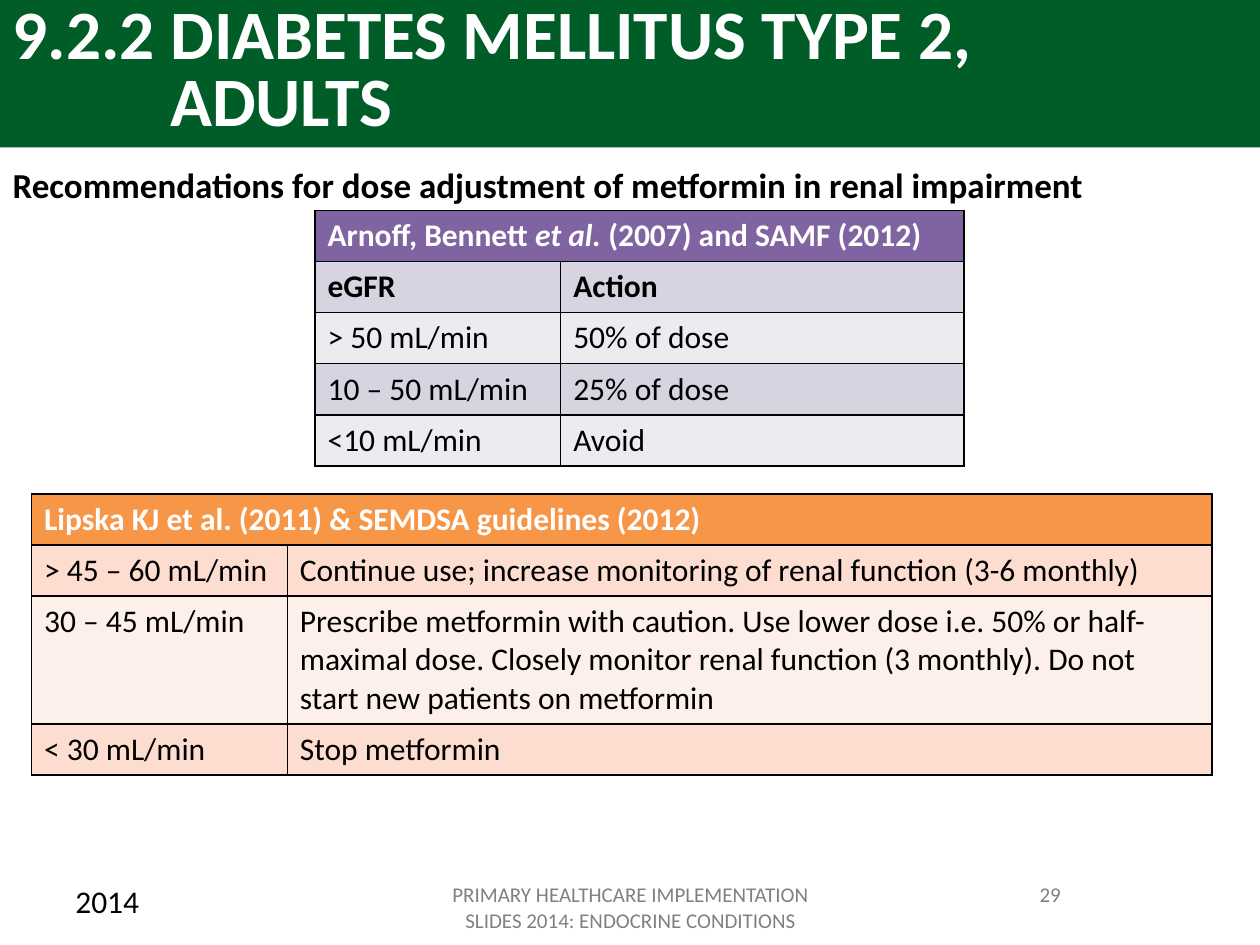
from lxml.etree import SubElement
from pptx import Presentation
from pptx.dml.color import RGBColor
from pptx.enum.shapes import MSO_SHAPE as Shape
from pptx.enum.text import MSO_ANCHOR as Anchor, MSO_AUTO_SIZE as AutoSize, PP_ALIGN as Align
from pptx.oxml.ns import qn
from pptx.util import Inches, Pt

COLORS = {
    "green": "005D28", "white": "FFFFFF", "black": "000000", "gray": "808080",
    "purple": "8064A2", "purple_mid": "D8D3E0", "purple_light": "EDEAF0",
    "orange": "F79646", "orange_mid": "FCDDCF", "orange_light": "FDEFE9",
}
FONT = "Calibri"

TITLE_LINES = ["9.2.2 DIABETES MELLITUS TYPE 2,", "ADULTS"]
SUBTITLE = "Recommendations for dose adjustment of metformin in renal impairment"
TABLES = [
    {
        "position": (2.5, 1.67), "columns": (1.95, 3.2), "palette": "purple", "bold_rows": 2,
        "heading": [("Arnoff, Bennett ", False), ("et al. ", True), ("(2007) and SAMF (2012)", False)],
        "rows": [
            ("eGFR", "Action"),
            ("> 50 mL/min", "50% of dose"),
            ("10 – 50 mL/min", "25% of dose"),
            ("<10 mL/min", "Avoid"),
        ],
    },
    {
        "position": (0.25, 3.92), "columns": (2.03, 7.34), "palette": "orange", "bold_rows": 1,
        "heading": [("Lipska KJ et al. (2011) & SEMDSA guidelines (2012)", False)],
        "rows": [
            ("> 45 – 60 mL/min", "Continue use; increase monitoring of renal function (3-6 monthly)"),
            ("30 – 45 mL/min", "Prescribe metformin with caution. Use lower dose i.e. 50% or half-maximal dose. "
             "Closely monitor renal function (3 monthly). Do not start new patients on metformin"),
            ("< 30 mL/min", "Stop metformin"),
        ],
    },
]
ROW_HEIGHT = 0.4
FOOTERS = [  # text, left, width, size, color, alignment
    ("2014", 0.5, 2.33, 18, "black", Align.LEFT),
    ("PRIMARY HEALTHCARE IMPLEMENTATION SLIDES 2014: ENDOCRINE CONDITIONS",
     3.42, 3.17, 12, "gray", Align.CENTER),
    ("29", 7.17, 2.33, 12, "gray", Align.CENTER),
]


def rgb(name):
    return RGBColor.from_string(COLORS[name])


def format_runs(paragraph, size, color, bold=False):
    for run in paragraph.runs:
        run.font.name = FONT
        run.font.size = Pt(size)
        run.font.bold = bold
        run.font.color.rgb = rgb(color)


def place(shape, left, top, width, height):
    shape.left, shape.top = Inches(left), Inches(top)
    shape.width, shape.height = Inches(width), Inches(height)


def prepare_frame(frame):
    frame.word_wrap = True
    frame.auto_size = AutoSize.NONE
    frame.vertical_anchor = Anchor.TOP


def set_indent(paragraph, left, first=0):
    properties = paragraph._p.get_or_add_pPr()
    properties.set("marL", str(Inches(left)))
    properties.set("indent", str(Inches(first)))
    return properties


def style_cell(cell, color):
    """Fill the cell and draw a thin black line on its four sides."""
    cell.fill.solid()
    cell.fill.fore_color.rgb = rgb(color)
    properties = cell._tc.get_or_add_tcPr()
    for index, side in enumerate(("lnL", "lnR", "lnT", "lnB")):
        line = SubElement(properties, qn(f"a:{side}"), w=str(Pt(1)))
        fill = SubElement(line, qn("a:solidFill"))
        SubElement(fill, qn("a:srgbClr"), val=COLORS["black"])
        properties.insert(index, line)


def add_dose_table(slide, content):
    columns, rows, palette = content["columns"], content["rows"], content["palette"]
    row_count = len(rows) + 1
    left, top = content["position"]
    table = slide.shapes.add_table(
        row_count, len(columns), Inches(left), Inches(top),
        Inches(sum(columns)), Inches(ROW_HEIGHT * row_count)).table
    for column, width in zip(table.columns, columns):
        column.width = Inches(width)

    heading = table.cell(0, 0)
    heading.merge(table.cell(0, len(columns) - 1))
    paragraph = heading.text_frame.paragraphs[0]
    for text, italic in content["heading"]:
        run = paragraph.add_run()
        run.text = text
        run.font.italic = italic
    format_runs(paragraph, 18, "white", bold=True)
    for cell in table.rows[0].cells:
        style_cell(cell, palette)

    for row_index, texts in enumerate(rows, start=1):
        shade = "mid" if row_index % 2 else "light"
        for cell, text in zip(table.rows[row_index].cells, texts):
            cell.text_frame.text = text
            format_runs(cell.text_frame.paragraphs[0], 18, "black", row_index < content["bold_rows"])
            style_cell(cell, f"{palette}_{shade}")


def add_title(slide):
    band = slide.shapes.add_shape(Shape.RECTANGLE, 0, 0, Inches(10), Inches(1.17))
    band.shadow.inherit = False
    band.fill.solid()
    band.fill.fore_color.rgb = rgb("green")
    band.line.fill.background()
    title = slide.shapes.title
    title._element.addprevious(band._element)

    place(title, 0, 0, 9.5, 1.25)
    prepare_frame(title.text_frame)
    title.text_frame.text = "\n".join(TITLE_LINES)
    for paragraph, indent in zip(title.text_frame.paragraphs, (0, 1.25)):
        paragraph.alignment = Align.LEFT
        paragraph.line_spacing = 0.8
        set_indent(paragraph, indent)
        format_runs(paragraph, 39.6, "white", bold=True)


def add_subtitle(slide):
    body = slide.placeholders[1]
    place(body, 0, 1.25, 9.53, 5.14)
    prepare_frame(body.text_frame)
    body.text_frame.text = SUBTITLE
    paragraph = body.text_frame.paragraphs[0]
    paragraph.space_before = Pt(0)
    SubElement(set_indent(paragraph, 0.38, -0.38), qn("a:buNone"))
    format_runs(paragraph, 20, "black", bold=True)


def add_footers(slide):
    for text, left, width, size, color, alignment in FOOTERS:
        box = slide.shapes.add_textbox(Inches(left), Inches(6.95), Inches(width), Inches(0.4))
        prepare_frame(box.text_frame)
        box.text_frame.text = text
        paragraph = box.text_frame.paragraphs[0]
        paragraph.alignment = alignment
        format_runs(paragraph, size, color)


def main():
    presentation = Presentation()
    presentation.slide_width, presentation.slide_height = Inches(10), Inches(7.5)
    slide = presentation.slides.add_slide(presentation.slide_layouts[1])
    add_title(slide)
    add_subtitle(slide)
    add_footers(slide)
    for content in TABLES:
        add_dose_table(slide, content)
    presentation.save("out.pptx")


if __name__ == "__main__":
    main()
